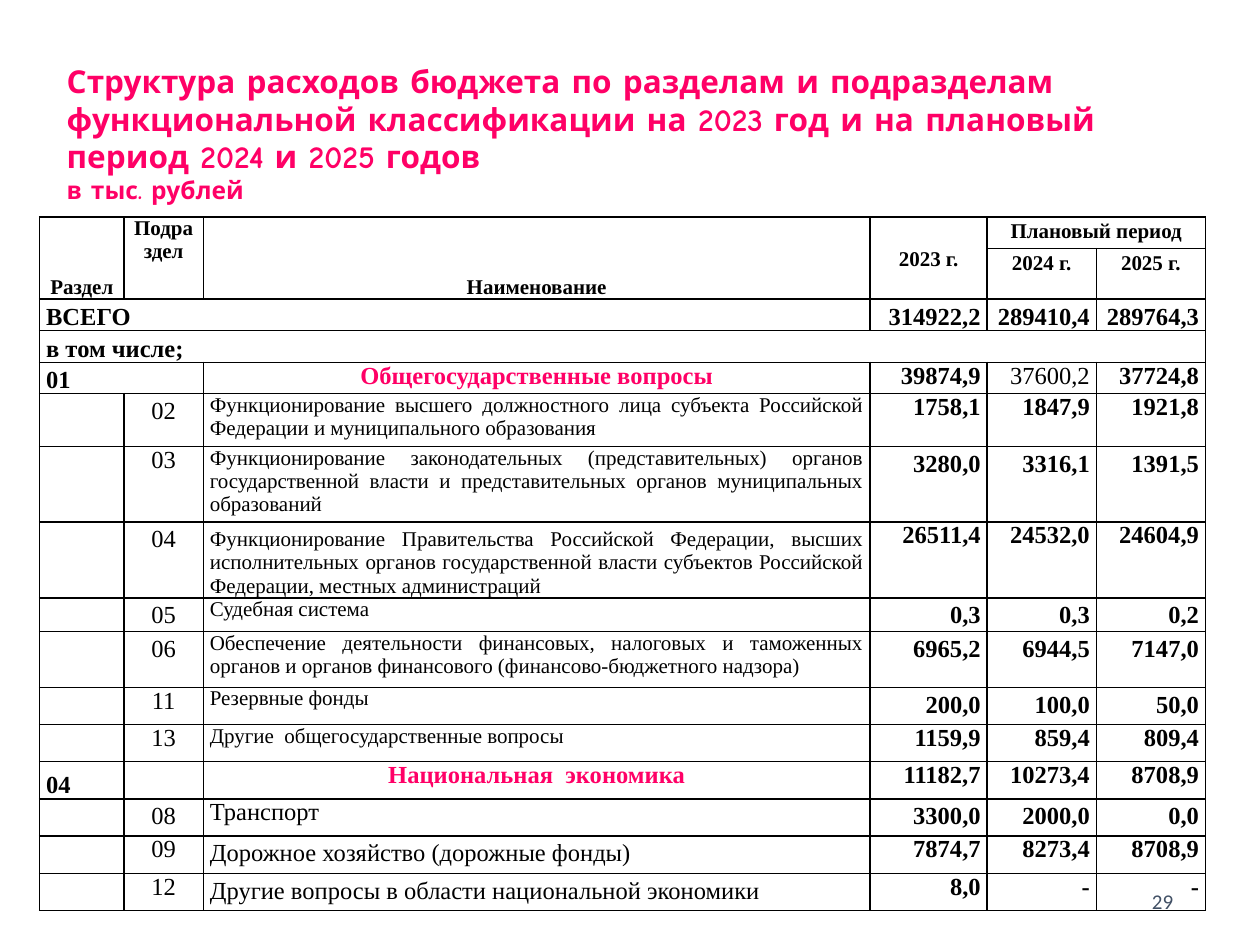
from lxml.etree import SubElement as Sub
from pptx import Presentation
from pptx.dml.color import RGBColor as Rgb
from pptx.enum.text import MSO_ANCHOR as Anc, MSO_AUTO_SIZE as Auto, PP_ALIGN as Al
from pptx.oxml.ns import qn
from pptx.util import Cm, Pt

HUES = {"ink": "000000", "pink": "FF0066", "slate": "415065"}
SERIF = "Times New Roman"

BASE = {"size": 14, "bold": True, "hue": "ink", "name": SERIF,
        "align": Al.LEFT, "line": 1.0, "anchor": Anc.TOP}
LOOSE = {"line": 1.15}
LOW = {"anchor": Anc.BOTTOM}
HEAD = {"size": 12, "align": Al.CENTER}
CODE = {"bold": False, "align": Al.CENTER}
NAME = {"bold": False, "align": Al.JUSTIFY}
NUM = {"align": Al.RIGHT}
FORMS = {
    "head": HEAD,
    "headlow": HEAD | LOW,
    "headmid": HEAD | LOOSE | {"anchor": Anc.MIDDLE},
    "headair": HEAD | LOOSE,
    "low": LOW,
    "topic": {"hue": "pink", "align": Al.CENTER},
    "code": CODE,
    "codeair": CODE | LOOSE,
    "small": NAME | {"size": 12},
    "smalllow": NAME | LOW | {"size": 12},
    "name": NAME,
    "nameair": NAME | LOOSE,
    "num": NUM,
    "numair": NUM | LOOSE,
    "numlow": NUM | LOW,
    "light": NUM | {"bold": False},
}

COLS = [1.7, 1.6, 13.44, 2.36, 2.2, 2.2]
ROWS = [0.64, 0.94, 0.64, 0.64, 0.63, 1.06, 1.47, 1.53, 0.63, 1.12,
        0.75, 0.75, 0.75, 0.75, 0.75, 0.75]
SPANS = [(0, 0, 1, 0), (0, 1, 1, 1), (0, 2, 1, 2), (0, 3, 1, 3), (0, 4, 0, 5),
         (2, 0, 2, 2), (3, 0, 3, 5), (4, 0, 4, 1)]
TOP = {
    (0, 0): ("Раздел", "headlow"),
    (0, 1): ("Подраздел", "head"),
    (0, 2): ("Наименование", "headlow"),
    (0, 3): ("2023 г.", "headmid"),
    (0, 4): ("Плановый период", "headair"),
    (1, 4): ("2024 г.", "headair"),
    (1, 5): ("2025 г.", "headair"),
    (2, 0): ("ВСЕГО", "low"),
    (3, 0): ("в том числе;", "low"),
    (4, 0): ("01", "low"),
    (12, 0): ("04", "low"),
}
BODY = {
    2: ("", "code", "", "name", "numlow", "314922,2 289410,4 289764,3"),
    4: ("", "code", "Общегосударственные вопросы", "topic", "num",
        "39874,9 37600,2 37724,8"),
    5: ("02", "codeair", "Функционирование высшего должностного лица субъекта "
        "Российской Федерации и муниципального образования",
        "small", "num", "1758,1 1847,9 1921,8"),
    6: ("03", "code", "Функционирование законодательных (представительных) "
        "органов государственной власти и представительных органов "
        "муниципальных образований", "small", "numair", "3280,0 3316,1 1391,5"),
    7: ("04", "codeair", "Функционирование Правительства Российской Федерации, "
        "высших исполнительных органов государственной власти субъектов "
        "Российской Федерации, местных администраций",
        "smalllow", "num", "26511,4 24532,0 24604,9"),
    8: ("05", "codeair", "Судебная система", "small", "numair", "0,3 0,3 0,2"),
    9: ("06", "codeair", "Обеспечение деятельности финансовых, налоговых и "
        "таможенных органов и органов финансового (финансово-бюджетного "
        "надзора)", "small", "numair", "6965,2 6944,5 7147,0"),
    10: ("11", "code", "Резервные фонды", "small", "numair", "200,0 100,0 50,0"),
    11: ("13", "code", "Другие  общегосударственные вопросы", "small", "num",
         "1159,9 859,4 809,4"),
    12: ("", "code", "Национальная  экономика", "topic", "num",
         "11182,7 10273,4 8708,9"),
    13: ("08", "codeair", "Транспорт", "name", "numair", "3300,0 2000,0 0,0"),
    14: ("09", "code", "Дорожное хозяйство (дорожные фонды)", "nameair", "num",
         "7874,7 8273,4 8708,9"),
    15: ("12", "code", "Другие вопросы в области национальной экономики",
         "nameair", "num", "8,0 - -"),
}


def fill_cells():
    cells = dict(TOP)
    for row, (code, cform, name, nform, vform, vals) in BODY.items():
        line = [(code, cform), (name, nform)]
        line += [(val, vform) for val in vals.split()]
        cells |= {(row, col): item for col, item in enumerate(line, 1) if item[0]}
    cells[4, 4] = ("37600,2", "light")
    return cells


class Deck:
    def __init__(self):
        self.prs = Presentation()
        self.prs.slide_width, self.prs.slide_height = Cm(25.4), Cm(19.05)
        self.slide = self.prs.slides.add_slide(self.prs.slide_layouts[5])

    def place(self, shape, box):
        for key, val in zip(("left", "top", "width", "height"), box):
            setattr(shape, key, Cm(val))

    def words(self, para, text, form):
        para.alignment, para.line_spacing = form["align"], form["line"]
        run = para.add_run()
        run.text = text
        vals = {"name": form["name"], "size": Pt(form["size"]), "bold": form["bold"]}
        for key, val in vals.items():
            setattr(run.font, key, val)
        run.font.color.rgb = Rgb.from_string(HUES[form["hue"]])

    def title(self, box, lines):
        shape = self.slide.shapes.title
        self.place(shape, box)
        frame = shape.text_frame
        vals = {"word_wrap": True, "auto_size": Auto.NONE, "vertical_anchor": Anc.TOP}
        for key, val in vals.items():
            setattr(frame, key, val)
        for num, (text, size) in enumerate(lines):
            para = frame.add_paragraph() if num else frame.paragraphs[0]
            self.words(para, text, BASE | {"size": size, "hue": "pink", "name": "Comic Neue"})

    def label(self, box, text, form):
        frame = self.slide.shapes.add_textbox(*map(Cm, box)).text_frame
        vals = {"word_wrap": True, "vertical_anchor": Anc.MIDDLE, "margin_left": 0,
                "margin_right": 0, "margin_top": 0, "margin_bottom": 0}
        for key, val in vals.items():
            setattr(frame, key, val)
        self.words(frame.paragraphs[0], text, BASE | form)

    def edge(self, cell):
        props = cell._tc.get_or_add_tcPr()
        for side in ("lnL", "lnR", "lnT", "lnB"):
            line = Sub(props, qn(f"a:{side}"), w=str(Pt(1)))
            Sub(Sub(line, qn("a:solidFill")), qn("a:srgbClr"), val=HUES["ink"])
        cell.fill.background()

    def cell(self, cell, text, form):
        self.edge(cell)
        vals = {"margin_left": Cm(0.13), "margin_right": Cm(0.13), "margin_top": 0,
                "margin_bottom": 0, "vertical_anchor": form["anchor"]}
        for key, val in vals.items():
            setattr(cell, key, val)
        para = cell.text_frame.paragraphs[0]
        if text:
            self.words(para, text, form)
        else:
            Sub(para._p, qn("a:endParaRPr"), sz=str(form["size"] * 100))

    def grid(self, left, top, cells):
        box = (left, top, sum(COLS), sum(ROWS))
        table = self.slide.shapes.add_table(len(ROWS), len(COLS), *map(Cm, box)).table
        table.first_row = table.horz_banding = False
        for col, wide in zip(table.columns, COLS):
            col.width = Cm(wide)
        for row, high in zip(table.rows, ROWS):
            row.height = Cm(high)
        for r in range(len(ROWS)):
            for c in range(len(COLS)):
                text, kind = cells.get((r, c), ("", "head"))
                self.cell(table.cell(r, c), text, BASE | FORMS[kind])
        for r, c, last, end in SPANS:
            table.cell(r, c).merge(table.cell(last, end))


def main():
    deck = Deck()
    deck.label((17.93, 17.65, 5.72, 1.02), "29",
               {"size": 12, "bold": False, "hue": "slate", "name": "Calibri",
                "align": Al.RIGHT})
    deck.grid(0.8, 4.37, fill_cells())
    deck.title((1.09, 1.12, 23.8, 3.18), [
        ("Структура расходов бюджета по разделам и подразделам функциональной "
         "классификации на 2023 год и на плановый период 2024 и 2025 годов", 18),
        ("в тыс. рублей", 14)])
    deck.prs.save("out.pptx")


if __name__ == "__main__":
    main()
